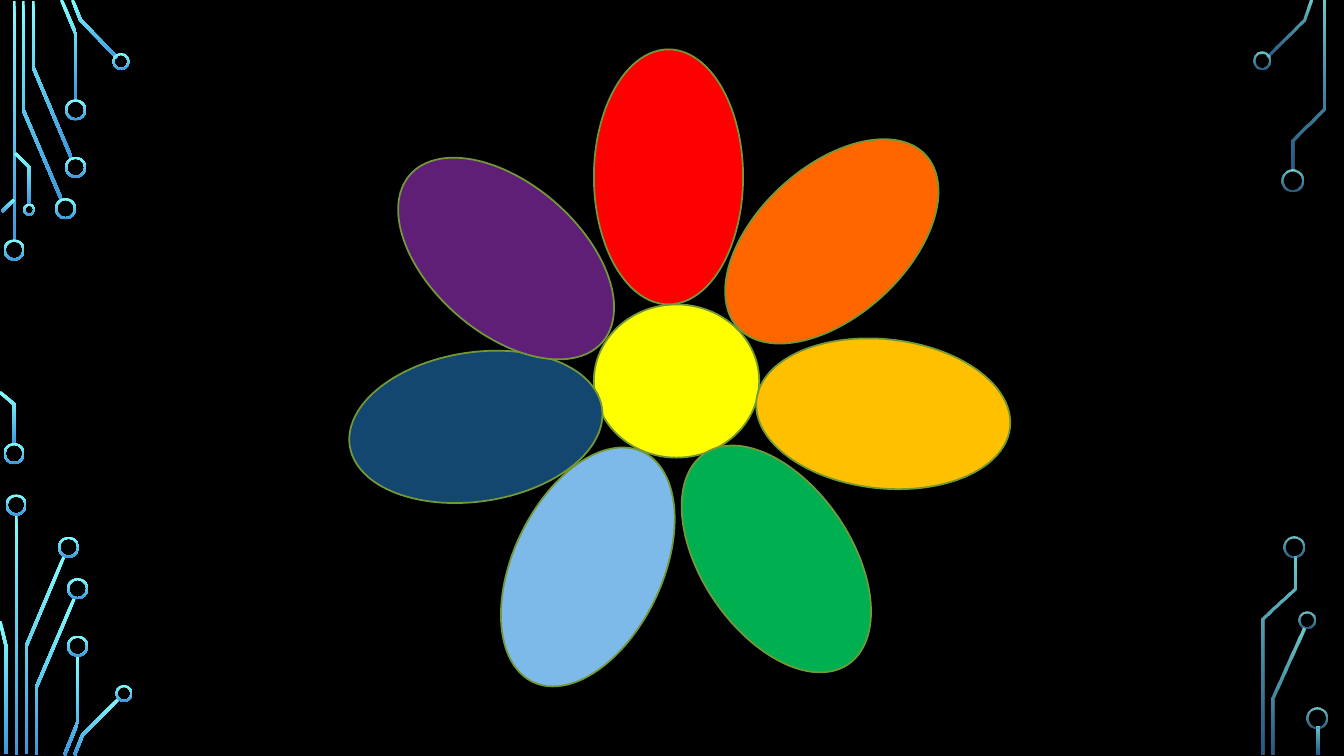
"""Build a slide with a seven-petal flower between circuit-board borders."""
import math

import pptx
import pptx.dml.color
import pptx.enum.shapes
import pptx.util
from lxml import etree

RGB = pptx.dml.color.RGBColor
SHAPES = pptx.enum.shapes.MSO_SHAPE
Inches = pptx.util.Inches

BLACK = RGB(0x00, 0x00, 0x00)
CYAN = RGB(0x82, 0xFF, 0xFF)
BLUE = RGB(0x3D, 0x97, 0xDE)
OLIVE = RGB(0x72, 0x98, 0x38)
YELLOW = RGB(0xFF, 0xFF, 0x00)
RED = RGB(0xFF, 0x00, 0x00)
ORANGE = RGB(0xFF, 0x66, 0x00)
AMBER = RGB(0xFF, 0xC0, 0x00)
GREEN = RGB(0x00, 0xB0, 0x50)
SKY = RGB(0x7D, 0xBA, 0xE9)
NAVY = RGB(0x13, 0x47, 0x70)
PURPLE = RGB(0x5F, 0x1F, 0x76)

TRACK_WIDTH = 0.03
RING_WALL = 0.02
PETAL_SIZE = (1.48, 2.53)
LEFT_OPACITY = (100, 100)
RIGHT_OPACITY = (80, 60)

LEFT_TRACKS = [
    [(0.14, 0.01), (0.14, 2.4)],
    [(0.23, 0.01), (0.23, 1.09), (0.61, 1.98)],
    [(0.33, 0.01), (0.33, 0.67), (0.71, 1.57)],
    [(0.61, 0), (0.75, 0.33), (0.75, 1)],
    [(0.72, 0), (0.8, 0.2), (1.16, 0.57)],
    [(0.02, 2.1), (0.14, 1.98)],
    [(0, 3.89), (0.14, 4.01), (0.14, 4.41)],
    [(0.15, 1.52), (0.29, 1.66), (0.29, 2.03)],
    [(0.16, 5.1), (0.16, 7.49)],
    [(0.64, 5.51), (0.26, 6.41), (0.26, 7.48)],
    [(0, 6.16), (0.06, 6.41), (0.06, 7.48)],
    [(0.74, 5.93), (0.36, 6.82), (0.36, 7.49)],
    [(0.77, 6.5), (0.77, 7.17), (0.64, 7.49)],
    [(1.18, 6.93), (0.82, 7.29), (0.74, 7.49)],
]
LEFT_RINGS = [
    (0.14, 2.48, 0.21), (0.14, 4.5, 0.21), (0.65, 2.07, 0.21),
    (0.75, 1.66, 0.21), (0.75, 1.09, 0.21), (1.2, 0.61, 0.17),
    (0.29, 2.08, 0.12), (0.16, 5.01, 0.21), (0.68, 5.43, 0.21),
    (0.77, 5.84, 0.21), (0.77, 6.41, 0.21), (1.23, 6.88, 0.17),
]
RIGHT_TRACKS = [
    [(13, 0), (12.93, 0.2), (12.57, 0.56)],
    [(13.13, 0.01), (13.13, 1.08), (12.82, 1.39), (12.82, 1.69)],
    [(12.93, 6.23), (12.63, 6.93), (12.63, 7.49)],
    [(12.84, 5.52), (12.84, 5.84), (12.53, 6.14), (12.53, 7.49)],
    [(13.07, 7.21), (13.07, 7.49)],
]
RIGHT_RINGS = [
    (12.52, 0.6, 0.17), (12.82, 1.79, 0.21), (12.96, 6.15, 0.17),
    (12.83, 5.43, 0.21), (13.06, 7.12, 0.21),
]
PETALS = [
    (RED, 5.89, 0.49, 0), (ORANGE, 7.51, 1.13, 47.5),
    (AMBER, 8.02, 2.84, 96.1), (GREEN, 6.96, 4.28, 145.7),
    (SKY, 5.09, 4.36, 25.5), (NAVY, 3.98, 2.97, 261.4),
    (PURPLE, 4.28, 1.3, 311),
]


def glow(shape, opacity):
    """Fill a circuit part with the cyan-to-blue gradient."""
    shape.shadow.inherit = False
    shape.line.fill.background()
    shape.fill.gradient()
    shape.fill.gradient_angle = 270
    stops = shape.fill.gradient_stops
    for stop, position, color in zip(stops, (0, 1), (CYAN, BLUE)):
        stop.position = position
        stop.color.rgb = color
    for tint, percent in zip(shape._element.xpath(".//a:gs/a:srgbClr"), opacity):
        if percent < 100:
            alpha = etree.SubElement(tint, pptx.oxml.ns.qn("a:alpha"))
            alpha.set("val", str(percent * 1000))


def track_outline(route):
    """Return the outline of a mitred track around its centre route."""
    normals = []
    for (x1, y1), (x2, y2) in zip(route, route[1:]):
        length = math.hypot(x2 - x1, y2 - y1)
        normals.append(((y1 - y2) / length, (x2 - x1) / length))
    one_side, other_side = [], []
    befores = normals[:1] + normals
    afters = normals + normals[-1:]
    for (x, y), (ax, ay), (bx, by) in zip(route, befores, afters):
        reach = TRACK_WIDTH / 2 / (1 + ax * bx + ay * by)
        dx, dy = (ax + bx) * reach, (ay + by) * reach
        one_side.append((x + dx, y + dy))
        other_side.append((x - dx, y - dy))
    return one_side + other_side[::-1]


def add_track(slide, route, opacity):
    """Draw one circuit track."""
    corners = [(Inches(x), Inches(y)) for x, y in track_outline(route)]
    builder = slide.shapes.build_freeform(*corners[0])
    builder.add_line_segments(corners[1:], close=True)
    glow(builder.convert_to_shape(), opacity)


def add_ring(slide, center_x, center_y, diameter, opacity):
    """Draw the ring that ends a track."""
    ring = slide.shapes.add_shape(
        SHAPES.DONUT, Inches(center_x - diameter / 2),
        Inches(center_y - diameter / 2), Inches(diameter), Inches(diameter))
    ring.adjustments[0] = RING_WALL / diameter
    glow(ring, opacity)


def add_circuit(slide, tracks, rings, opacity):
    """Draw the tracks and rings of one border."""
    for route in tracks:
        add_track(slide, route, opacity)
    for ring in rings:
        add_ring(slide, *ring, opacity)


def add_flower_part(slide, kind, color, left, top, size, rotation=0):
    """Draw a petal or the heart of the flower."""
    part = slide.shapes.add_shape(
        kind, Inches(left), Inches(top), Inches(size[0]), Inches(size[1]))
    part.shadow.inherit = False
    part.rotation = rotation
    part.fill.solid()
    part.fill.fore_color.rgb = color
    part.line.color.rgb = OLIVE
    part.line.width = pptx.util.Pt(1.25)


def main():
    """Build and save the slide."""
    deck = pptx.Presentation()
    deck.slide_width, deck.slide_height = Inches(13.33), Inches(7.5)
    slide = deck.slides.add_slide(deck.slide_layouts[6])
    slide.background.fill.solid()
    slide.background.fill.fore_color.rgb = BLACK
    add_circuit(slide, LEFT_TRACKS, LEFT_RINGS, LEFT_OPACITY)
    add_circuit(slide, RIGHT_TRACKS, RIGHT_RINGS, RIGHT_OPACITY)
    add_flower_part(
        slide, SHAPES.FLOWCHART_CONNECTOR, YELLOW, 5.89, 3.02, (1.64, 1.52))
    for color, left, top, rotation in PETALS:
        add_flower_part(
            slide, SHAPES.OVAL, color, left, top, PETAL_SIZE, rotation)
    deck.save("out.pptx")


if __name__ == "__main__":
    main()
